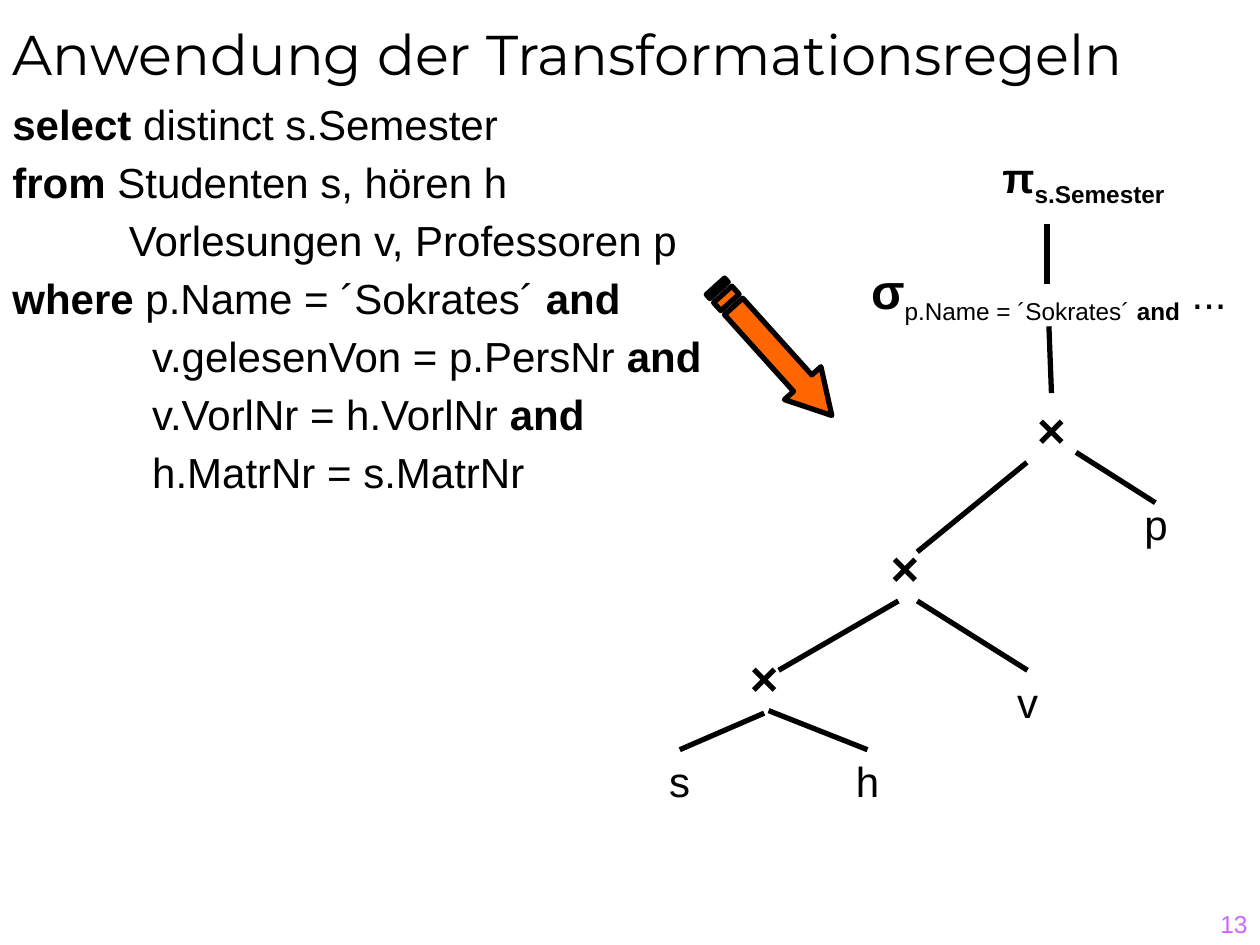
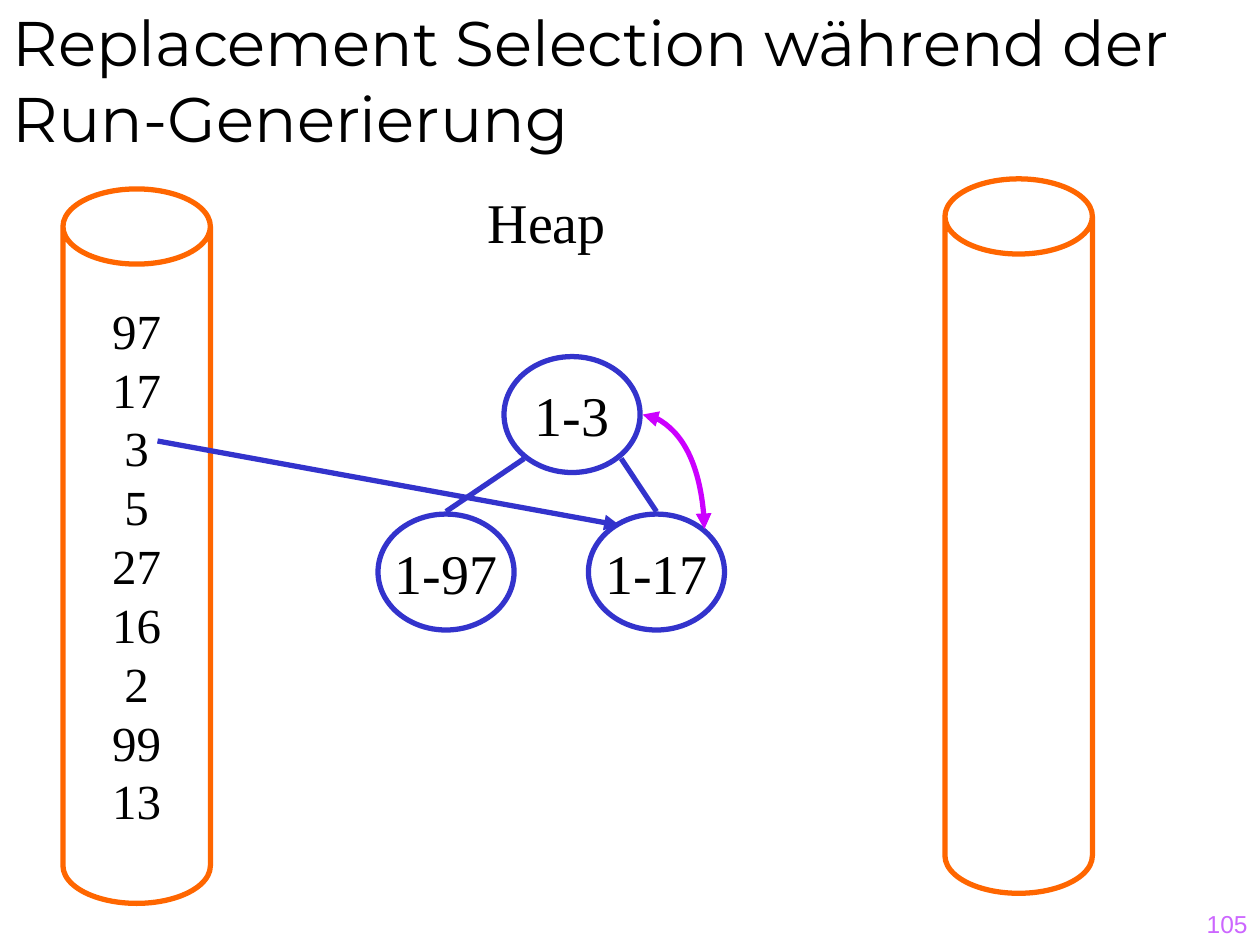
"""Build two database lecture slides: an operator tree and a replacement selection heap."""
from lxml import etree
from pptx import Presentation
from pptx import util as u
from pptx.dml.color import RGBColor
from pptx.enum import shapes, text
from pptx.oxml.ns import qn

PX = 9144
COLORS = {"ink": "000000", "paper": "FFFFFF", "accent": "FF6600",
          "heap": "3333CC", "swap": "CC00FF", "page": "CC66FF"}
SANS, SERIF, TITLE = "Arial", "Times New Roman", "Montserrat"
CENTER = text.PP_ALIGN.CENTER
TOP, BOTTOM = 0, 2


def px(*values):
    return [u.Emu(v * PX) for v in values]


def rgb(name):
    return RGBColor.from_string(COLORS[name])


class Deck:
    """Holds the presentation style and the current slide."""

    def __init__(self):
        self.prs = Presentation()
        self.prs.slide_width, self.prs.slide_height = px(1000, 750)

    def slide(self, title, size, number, bottom=2):
        self.s = self.prs.slides.add_slide(self.prs.slide_layouts[5])
        sp = self.s.shapes.title
        sp.left, sp.top, sp.width, sp.height = px(0, 0, 1000, 125)
        tf = sp.text_frame
        tf.auto_size = text.MSO_AUTO_SIZE.NONE
        tf.margin_top, tf.margin_bottom = px(0, bottom)
        self.lines(tf, [title], size, TITLE, text.PP_ALIGN.LEFT, anchor=text.MSO_ANCHOR.BOTTOM)
        self.text((792, 700, 208, 50), [number], 14, align=text.PP_ALIGN.RIGHT,
                  color="page", anchor=text.MSO_ANCHOR.BOTTOM)

    def lines(self, tf, lines, size, font=SANS, align=None, color="ink",
              anchor=text.MSO_ANCHOR.TOP, wrap=True, spacing=None, gap=0):
        tf.word_wrap, tf.vertical_anchor = wrap, anchor
        for i, line in enumerate(lines):
            p = tf.add_paragraph() if i else tf.paragraphs[0]
            p.alignment, p.line_spacing = align, spacing
            if i and gap:
                p.space_before = u.Pt(gap)
            p.font.name, p.font.size = font, u.Pt(size)
            p.font.color.rgb = rgb(color)
            for run in [(line, "")] if isinstance(line, str) else line:
                self.run(p, *run)

    def run(self, p, content, style, size=None):
        r = p.add_run()
        r.text = content
        if "b" in style:
            r.font.bold = True
        if size:
            r.font.size = u.Pt(size)
        if "_" in style:
            r.font._element.set("baseline", "-25000")

    def text(self, box, lines, size, **style):
        sp = self.s.shapes.add_textbox(*px(*box))
        self.lines(sp.text_frame, lines, size, **style)
        return sp

    def outline(self, sp, fill, line):
        sp.shadow.inherit = False
        sp.fill.solid()
        sp.fill.fore_color.rgb = rgb(fill)
        sp.line.color.rgb, sp.line.width = rgb(line), u.Pt(3)

    def shape(self, kind, box, line, lines=(), size=32):
        sp = self.s.shapes.add_shape(kind, *px(*box))
        self.outline(sp, "paper", line)
        self.lines(sp.text_frame, lines, size, SERIF, CENTER,
                   anchor=text.MSO_ANCHOR.MIDDLE, wrap=False)
        return sp

    def can(self, left, top, lines=()):
        sp = self.shape(shapes.MSO_SHAPE.CAN, (left, top, 117, 567), "accent", lines, 28)
        sp.adjustments[0] = 0.51

    def striped_arrow(self, left, top, width, height, angle):
        fb = self.s.shapes.build_freeform(24, 0, scale=(width * PX / 32, height * PX / 4))
        fb.add_line_segments([(32, 2), (24, 4), (24, 3), (5, 3), (5, 1), (24, 1)])
        for start, end in ((2, 4), (0, 1)):
            fb.move_to(start, 1)
            fb.add_line_segments([(end, 1), (end, 3), (start, 3)])
        sp = fb.convert_to_shape(*px(left, top))
        sp.rotation = angle
        self.outline(sp, "accent", "ink")

    def line(self, start, end, color="ink", heads=(), curved=False):
        """Join two ends, each a point or a (shape, side) pair."""
        joins = [not isinstance(e[0], int) for e in (start, end)]
        points = [(0, 0) if j else e for j, e in zip(joins, (start, end))]
        kind = shapes.MSO_CONNECTOR.CURVE if curved else shapes.MSO_CONNECTOR.STRAIGHT
        c = self.s.shapes.add_connector(kind, *px(*points[0], *points[1]))
        if joins[0]:
            c.begin_connect(*start)
        if joins[1]:
            c.end_connect(*end)
        c.line.color.rgb, c.line.width = rgb(color), u.Pt(3)
        spPr = c._element.spPr
        if curved:
            spPr.find(qn("a:prstGeom")).set("prst", "curvedConnector2")
        for head in heads:
            etree.SubElement(spPr.find(qn("a:ln")), qn("a:" + head), type="triangle")
        etree.SubElement(spPr, qn("a:effectLst"))


def operator_tree(d):
    d.slide("Anwendung der Transformationsregeln", 32, "13", bottom=56)
    d.text((0, 84, 571, 326), [
        [("select", "b"), (" distinct s.Semester", "")],
        [("from", "b"), (" Studenten s, hören h", "")],
        "          Vorlesungen v, Professoren p",
        [("where", "b"), (" p.Name = ´Sokrates´ ", ""), ("and", "b")],
        [("            v.gelesenVon = p.PersNr ", ""), ("and", "b")],
        [("            v.VorlNr = h.VorlNr ", ""), ("and", "b")],
        "            h.MatrNr = s.MatrNr",
    ], 24, spacing=0.7, gap=13)

    leaves = {"s": (508, 595), "h": (657, 595), "v": (784, 532), "p": (886, 391)}
    leaf = {name: d.text((*at, 63, 50), [name], 24, align=CENTER) for name, at in leaves.items()}
    low, _, high = [d.text(box, [[("×", "b")]], 28, align=CENTER) for box in
                    ((579, 509, 55, 57), (697, 422, 39, 57), (807, 312, 55, 57))]
    sigma = d.text((665, 202, 335, 57), [[
        ("σ", "b", 28), ("p.Name = ´Sokrates´ ", "_"), ("and", "b_"), (" ...", "")]],
        24, align=CENTER)
    d.text((736, 115, 248, 50), [[("π", "b"), ("s.Semester", "b_")]], 24, align=CENTER)

    for start, end in [
        ((leaf["s"], TOP), (low, BOTTOM)),
        ((leaf["h"], TOP), (610, 564)),
        ((618, 532), (713, 477)),
        ((leaf["v"], TOP), (728, 477)),
        ((728, 438), (815, 367)),
        ((917, 399), (854, 359)),
        ((high, TOP), (sigma, BOTTOM)),
        ((831, 225), (831, 178)),
    ]:
        d.line(start, end)
    d.striped_arrow(545, 259, 138, 39, 48)


def replacement_selection(d):
    d.slide("Replacement Selection während der Run-Generierung", 36, "105")
    d.can(50, 150, ["97", "17", "3", "5", "27", "16", "2", "99", "13"])
    d.can(750, 142)
    d.text((377, 144, 114, 63), ["Heap"], 32, font=SERIF, align=CENTER, wrap=False)
    for label, left, top in (("1-3", 400, 283), ("1-97", 300, 408), ("1-17", 467, 408)):
        d.shape(shapes.MSO_SHAPE.OVAL, (left, top, 108, 92), "heap", [label])
    d.line((416, 364), (354, 406), "heap")
    d.line((493, 364), (521, 406), "heap")
    d.line((125, 350), (492, 417), "heap", ["tailEnd"])
    d.line((510, 329), (559, 420), "swap", ["headEnd", "tailEnd"], curved=True)


def main():
    d = Deck()
    operator_tree(d)
    replacement_selection(d)
    d.prs.save("out.pptx")


if __name__ == "__main__":
    main()
